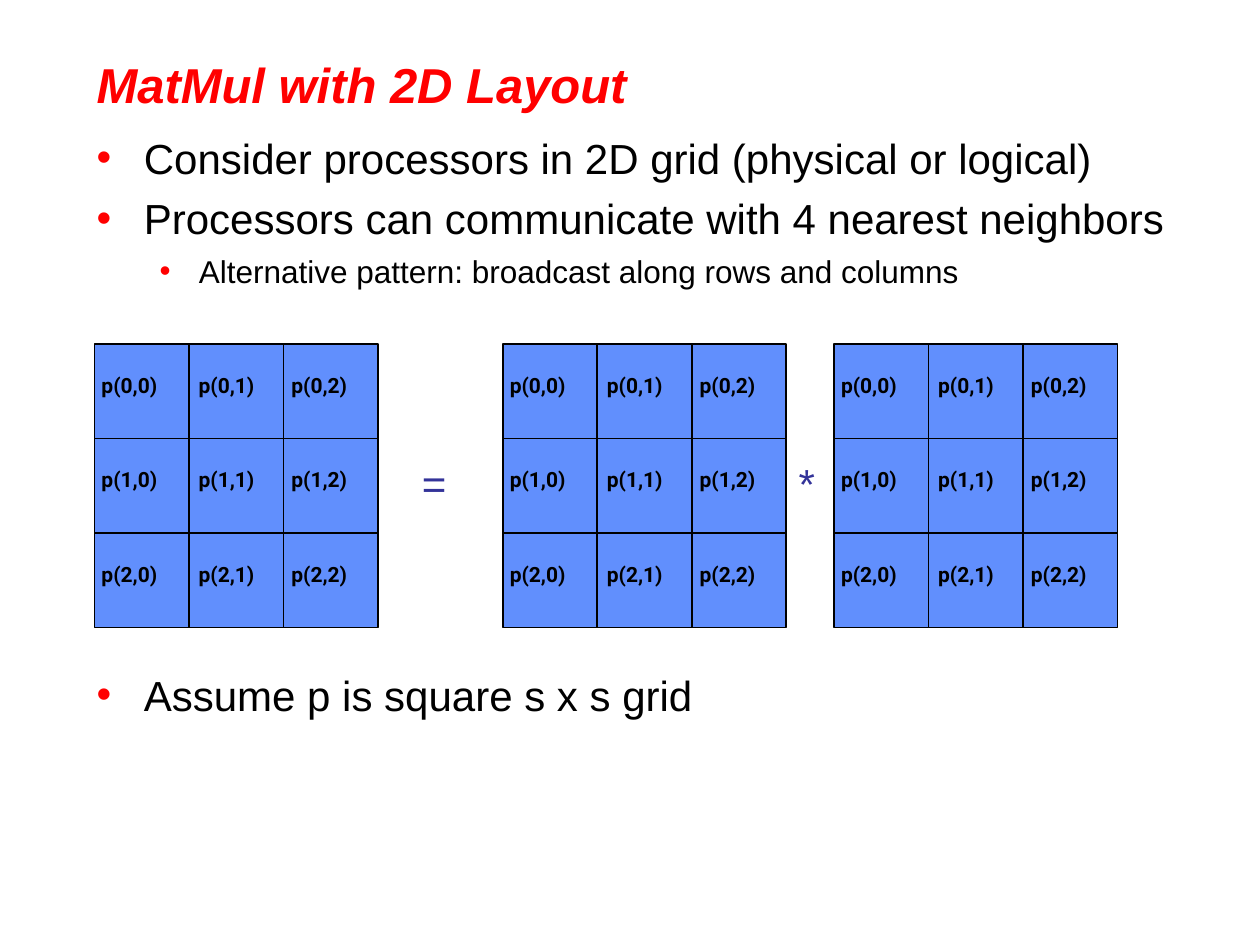
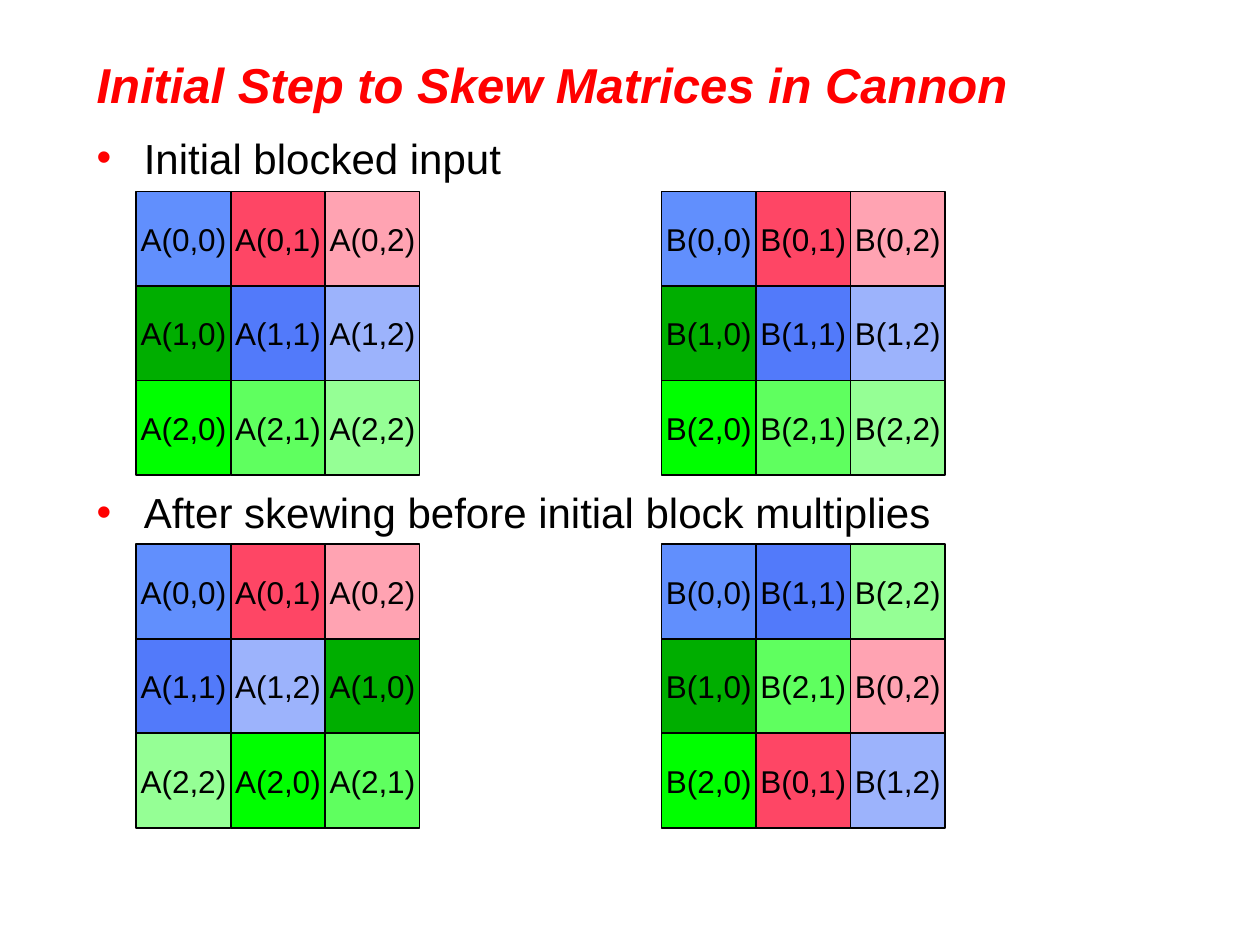
from lxml import etree
from pptx import Presentation
from pptx import util as u
from pptx.dml.color import RGBColor
from pptx.enum import shapes, text
from pptx.oxml.ns import qn

RED, BLACK, NAVY, BLUE = "FF0000", "000000", "333399", "618FFD"
N = 3       # blocks along each side of a matrix
CELL = 54   # side of one block
BLOCK_COLOURS = [
    [BLUE, "FE4665", "FFA3B2"],
    ["00AE00", "527AFA", "9CB3FC"],
    ["00FF00", "5FFF5F", "95FF95"],
]

# Bullets: (level, space before, wording)
LAYOUT_SLIDE = {
    "title": "MatMul with 2D Layout",
    "title_width": 420,
    "body_height": 397.5,
    "bullets": [
        (0, 0, "Consider processors in 2D grid (physical or logical)"),
        (0, 5.8, "Processors can communicate with 4 nearest neighbors"),
        (1, 4.8, "Alternative pattern: broadcast along rows and columns"),
        (0, 217, "Assume p is square s x s grid"),
    ],
}
SKEW_SLIDE = {
    "title": "Initial Step to Skew Matrices in Cannon",
    "title_width": 590,
    "body_height": 248.5,
    "bullets": [
        (0, 0, "Initial blocked input"),
        (0, 173.5, "After skewing before initial block multiplies"),
    ],
}

LEFT = 48
LEVELS = [{"size": 24, "margin": 27, "hang": 27}, {"size": 18, "margin": 58.5, "hang": 22.5}]
TITLE_FONT = {"size": u.Pt(28), "name": "Arial", "bold": True, "italic": True}
PROCESSOR_FONT = {"size": u.Pt(12), "name": "Roboto", "bold": True}
BLOCK_FONT = {"size": u.Pt(18), "name": "Arial"}
OPERATOR_FONT = {"size": u.Pt(24), "name": "Arial"}

PROCESSOR_TOP = 196.6
PROCESSOR_LEFTS = [54, 287.3, 476.6]
PROCESSOR_INSETS = [4, 5.5, 4.5]    # left inset of the label in each column
OPERATORS = [("=", 234, False), ("*", 449.3, True)]

MATRIX_LEFTS = {"A": 77.8, "B": 378}
INPUT_TOP, SKEWED_TOP = 109.4, 311


def colour(hex_value):
    return RGBColor.from_string(hex_value)


def set_all(target, values):
    for name, value in values.items():
        setattr(target, name, value)


def place(shape, left, top, width, height):
    set_all(shape, {"left": u.Pt(left), "top": u.Pt(top),
                    "width": u.Pt(width), "height": u.Pt(height)})


def write(para, wording, font, ink):
    span = para.add_run()
    span.text = wording
    set_all(span.font, font)
    span.font.color.rgb = colour(ink)


def add_bullet(para, level, gap, wording):
    style = LEVELS[level]
    set_all(para, {"level": level, "alignment": text.PP_ALIGN.LEFT,
                   "space_before": u.Pt(gap), "space_after": u.Pt(0)})
    props = para._p.get_or_add_pPr()
    props.set("marL", str(u.Pt(style["margin"])))
    props.set("indent", str(-u.Pt(style["hang"])))
    bullet_colour = etree.SubElement(props, qn("a:buClr"))
    etree.SubElement(bullet_colour, qn("a:srgbClr"), val=RED)
    etree.SubElement(props, qn("a:buFont"), typeface="Arial")
    etree.SubElement(props, qn("a:buChar"), char="•")
    write(para, wording, {"size": u.Pt(style["size"]), "name": "Arial"}, BLACK)


def add_page(deck, content):
    page = deck.slides.add_slide(deck.slide_layouts[1])
    title, body = page.placeholders
    place(title, LEFT, 24, content["title_width"], 48)
    place(body, LEFT, 72, 630, content["body_height"])
    for box, anchor in ((title, text.MSO_ANCHOR.MIDDLE), (body, text.MSO_ANCHOR.TOP)):
        set_all(box.text_frame, {"auto_size": text.MSO_AUTO_SIZE.NONE,
                                 "vertical_anchor": anchor, "word_wrap": True})
    heading = title.text_frame.paragraphs[0]
    heading.alignment = text.PP_ALIGN.LEFT
    write(heading, content["title"], TITLE_FONT, RED)
    frame = body.text_frame
    for index, bullet in enumerate(content["bullets"]):
        add_bullet(frame.add_paragraph() if index else frame.paragraphs[0], *bullet)
    return page


def add_block(page, left, top, fill, wording, font, align, frame_format):
    block = page.shapes.add_shape(shapes.MSO_SHAPE.RECTANGLE,
                                  u.Pt(left), u.Pt(top), u.Pt(CELL), u.Pt(CELL))
    block.shadow.inherit = False
    block.fill.solid()
    block.fill.fore_color.rgb = colour(fill)
    block.line.color.rgb = colour(BLACK)
    block.line.width = u.Pt(1)
    set_all(block.text_frame, {"word_wrap": False, **frame_format})
    para = block.text_frame.paragraphs[0]
    para.alignment = align
    write(para, wording, font, BLACK)


def grid(left, top):
    """Yield row, column, left and top of every block in a matrix."""
    for row in range(N):
        for column in range(N):
            yield row, column, left + column * CELL, top + row * CELL


def add_processors(page, left):
    for row, column, x, y in grid(left, PROCESSOR_TOP):
        add_block(page, x, y, BLUE, f"p({row},{column})", PROCESSOR_FONT, text.PP_ALIGN.LEFT,
                  {"vertical_anchor": text.MSO_ANCHOR.TOP, "margin_top": u.Pt(16),
                   "margin_left": u.Pt(PROCESSOR_INSETS[column]), "margin_right": 0})


def add_operator(page, sign, left, wrap):
    box = page.shapes.add_textbox(u.Pt(left), u.Pt(257.8), u.Pt(28.8), u.Pt(36))
    box.text_frame.word_wrap = wrap
    write(box.text_frame.paragraphs[0], sign, OPERATOR_FONT, NAVY)


def add_matrix(page, name, top, skewed):
    """Skewing shifts row i of A left by i, and column j of B up by j."""
    for row, column, x, y in grid(MATRIX_LEFTS[name], top):
        i, j = row, column
        if skewed and name == "A":
            j = (row + column) % N
        elif skewed:
            i = (row + column) % N
        add_block(page, x, y, BLOCK_COLOURS[i][j], f"{name}({i},{j})", BLOCK_FONT,
                  text.PP_ALIGN.CENTER, {"vertical_anchor": text.MSO_ANCHOR.MIDDLE})


def main():
    deck = Presentation()
    set_all(deck, {"slide_width": u.Pt(720), "slide_height": u.Pt(540)})

    page = add_page(deck, LAYOUT_SLIDE)
    for left in PROCESSOR_LEFTS:
        add_processors(page, left)
    for operator in OPERATORS:
        add_operator(page, *operator)

    page = add_page(deck, SKEW_SLIDE)
    for top, skewed in ((INPUT_TOP, False), (SKEWED_TOP, True)):
        for name in MATRIX_LEFTS:
            add_matrix(page, name, top, skewed)

    deck.save("out.pptx")


if __name__ == "__main__":
    main()
